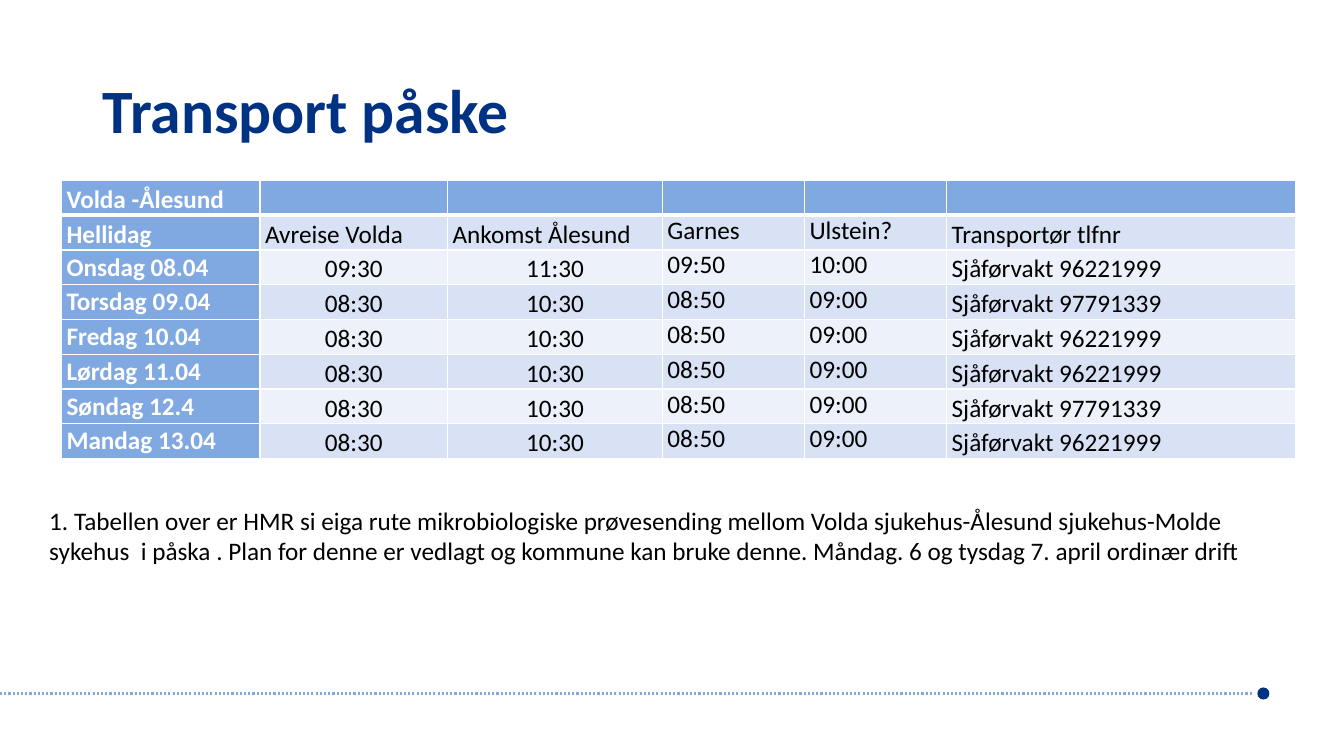
from lxml import etree
from pptx import Presentation
from pptx.dml.color import RGBColor
from pptx.enum.dml import MSO_LINE
from pptx.enum.shapes import MSO_CONNECTOR, MSO_SHAPE
from pptx.enum.text import MSO_ANCHOR, PP_ALIGN
from pptx.oxml.ns import qn
from pptx.util import Inches, Pt

DOTTED = MSO_LINE.ROUND_DOT
STRAIGHT = MSO_CONNECTOR.STRAIGHT
OVAL = MSO_SHAPE.OVAL
TOP, MIDDLE, BOTTOM = MSO_ANCHOR.TOP, MSO_ANCHOR.MIDDLE, MSO_ANCHOR.BOTTOM
LEFT, CENTER = PP_ALIGN.LEFT, PP_ALIGN.CENTER

FONT = "Calibri"
NAVY, BLUE, WHITE, BLACK = "003283", "81A9E1", "FFFFFF", "000000"
BANDS = ["EDF1F9", "D8E2F4"]

TITLE = "Transport påske"
NOTE = (
    "1. Tabellen over er HMR si eiga rute mikrobiologiske prøvesending mellom "
    "Volda sjukehus-Ålesund sjukehus-Molde sykehus  i påska . Plan for denne er "
    "vedlagt og kommune kan bruke denne. Måndag. 6 og tysdag 7. april ordinær drift"
)
ROUTES = [
    ("Volda -Ålesund", "", "", "", "", ""),
    ("Hellidag", "Avreise Volda", "Ankomst Ålesund", "Garnes", "Ulstein?", "Transportør tlfnr"),
    ("Onsdag 08.04", "09:30", "11:30", "09:50", "10:00", "Sjåførvakt 96221999"),
    ("Torsdag 09.04", "08:30", "10:30", "08:50", "09:00", "Sjåførvakt 97791339"),
    ("Fredag 10.04", "08:30", "10:30", "08:50", "09:00", "Sjåførvakt 96221999"),
    ("Lørdag 11.04", "08:30", "10:30", "08:50", "09:00", "Sjåførvakt 96221999"),
    ("Søndag 12.4", "08:30", "10:30", "08:50", "09:00", "Sjåførvakt 97791339"),
    ("Mandag 13.04", "08:30", "10:30", "08:50", "09:00", "Sjåførvakt 96221999"),
]
COLUMN_WIDTHS = [1.97, 1.86, 2.13, 1.41, 1.41, 3.46]
ROW_HEIGHT = 0.345
COLUMN_ANCHORS = [MIDDLE, BOTTOM, BOTTOM, TOP, TOP, BOTTOM]
TIME_COLUMNS = (1, 2)


def color(value):
    return RGBColor.from_string(value)


def format_runs(paragraph, size, value, bold=False):
    for run in paragraph.runs:
        run.font.name = FONT
        run.font.size = Pt(size)
        run.font.bold = bold
        run.font.color.rgb = color(value)


def add_borders(cell, widths):
    properties = cell._tc.get_or_add_tcPr()
    for side, width in widths.items():
        line = etree.SubElement(properties, qn(f"a:ln{side}"), w=str(Pt(width)))
        fill = etree.SubElement(line, qn("a:solidFill"))
        etree.SubElement(fill, qn("a:srgbClr"), val=WHITE)


def format_cell(cell, row, column, text):
    heading = row == 0 or column == 0
    cell.text_frame.text = text
    cell.margin_left = cell.margin_right = Inches(0.05)
    cell.margin_top = cell.margin_bottom = 0
    cell.vertical_anchor = BOTTOM if row < 2 and column == 0 else COLUMN_ANCHORS[column]
    paragraph = cell.text_frame.paragraphs[0]
    paragraph.alignment = CENTER if row > 1 and column in TIME_COLUMNS else LEFT
    format_runs(paragraph, 18, WHITE if heading else BLACK, heading)
    add_borders(cell, {"L": 1, "R": 1, "T": 3 if row == 1 else 1, "B": 3 if row == 0 else 1})
    cell.fill.solid()
    cell.fill.fore_color.rgb = color(BLUE if heading else BANDS[row % 2])


def add_title(slide):
    title = slide.shapes.title
    title.left, title.top = Inches(0.92), Inches(0.4)
    title.width, title.height = Inches(11.5), Inches(1.45)
    title.text_frame.text = TITLE
    title.text_frame.vertical_anchor = MIDDLE
    paragraph = title.text_frame.paragraphs[0]
    paragraph.alignment = LEFT
    paragraph.line_spacing = 0.9
    format_runs(paragraph, 44, NAVY, True)


def add_routes(slide):
    table = slide.shapes.add_table(
        len(ROUTES), len(COLUMN_WIDTHS), Inches(0.61), Inches(1.79),
        Inches(sum(COLUMN_WIDTHS)), Inches(ROW_HEIGHT * len(ROUTES)),
    ).table
    table.first_col = True
    for column, width in zip(table.columns, COLUMN_WIDTHS):
        column.width = Inches(width)
    for row, texts in enumerate(ROUTES):
        table.rows[row].height = Inches(ROW_HEIGHT)
        for column, text in enumerate(texts):
            format_cell(table.cell(row, column), row, column, text)


def add_note(slide):
    note = slide.shapes.add_textbox(Inches(0.39), Inches(4.96), Inches(12.46), Inches(0.71))
    note.text_frame.word_wrap = True
    note.text_frame.text = NOTE
    format_runs(note.text_frame.paragraphs[0], 18, BLACK)


def add_footer_rule(slide):
    rule = slide.shapes.add_connector(STRAIGHT, 0, Inches(6.88), Inches(12.42), Inches(6.88))
    rule.line.color.rgb = color(BLUE)
    rule.line.width = Pt(1.5)
    rule.line.dash_style = DOTTED
    etree.SubElement(rule._element.spPr, qn("a:effectLst"))
    dot = slide.shapes.add_shape(OVAL, Inches(12.47), Inches(6.82), Inches(0.12), Inches(0.12))
    dot.shadow.inherit = False
    dot.fill.solid()
    dot.fill.fore_color.rgb = color(NAVY)
    dot.line.fill.background()


def main():
    presentation = Presentation()
    presentation.slide_width, presentation.slide_height = Inches(13.33), Inches(7.5)
    slide = presentation.slides.add_slide(presentation.slide_layouts[5])
    add_footer_rule(slide)
    add_title(slide)
    add_routes(slide)
    add_note(slide)
    presentation.save("out.pptx")


if __name__ == "__main__":
    main()
